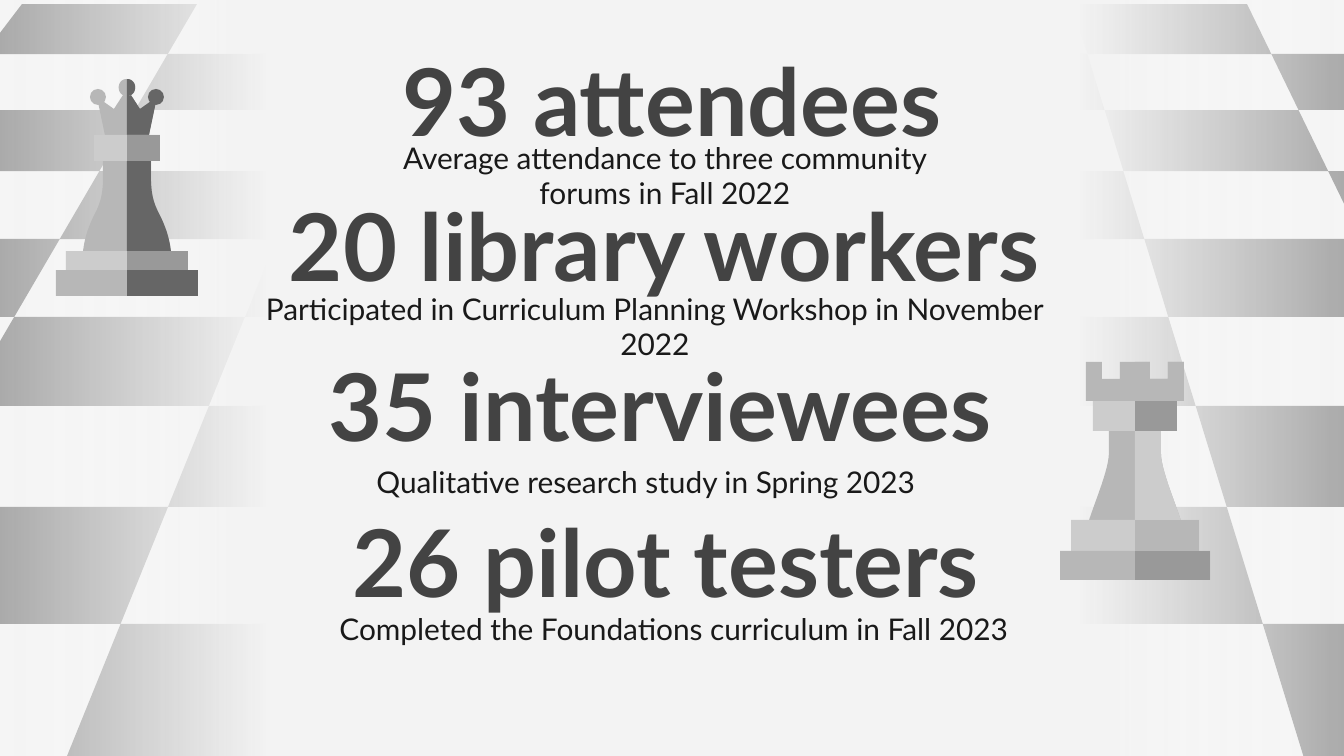
from dataclasses import dataclass

import pptx
import pptx.dml.color
import pptx.enum.shapes
import pptx.enum.text
import pptx.oxml.ns
import pptx.util
from lxml import etree

RGB = pptx.dml.color.RGBColor
ANCHOR = pptx.enum.text.MSO_ANCHOR
PRESET = pptx.enum.shapes.MSO_SHAPE

SCALE = 914400 / 134.4  # EMU in one px
WIDTH, HEIGHT = 1344, 756
INSET = 13

PAPER = RGB(0xF3, 0xF3, 0xF3)
WHITE = RGB(0xFF, 0xFF, 0xFF)
HEADING = RGB(0x43, 0x43, 0x43)
CAPTION = RGB(0x19, 0x19, 0x19)
DARK = RGB(0x66, 0x66, 0x66)
MID = RGB(0x99, 0x99, 0x99)
SOFT = RGB(0xB7, 0xB7, 0xB7)
PALE = RGB(0xCC, 0xCC, 0xCC)

Point = tuple[float, float]

ROW_EDGES = [4, 54, 110, 171, 239, 317, 406, 507, 624, 761]
CLEAR_LEFT, CLEAR_RIGHT = 266, 1078  # the veil is opaque between these


@dataclass
class Part:
    """Half of a symmetric part: points as (distance from the axis, y)."""
    half: list[Point]
    left: RGB
    right: RGB


@dataclass
class TextStyle:
    size: int
    bold: bool
    color: RGB
    anchor: ANCHOR


@dataclass
class Label:
    text: str
    x: int
    y: int
    w: int
    h: int
    style: TextStyle


def px(n: float) -> int:
    return round(n * SCALE)


def bezier(a: Point, b: Point, c: Point, d: Point, steps: int = 16) -> list[Point]:
    def at(t: float, i: int) -> float:
        u = 1 - t
        return u**3 * a[i] + 3 * u * u * t * b[i] + 3 * u * t * t * c[i] + t**3 * d[i]
    return [(at(k / steps, 0), at(k / steps, 1)) for k in range(steps + 1)]


def block(half_width: int, top: int, bottom: int) -> list[Point]:
    return [(0, top), (half_width, top), (half_width, bottom), (0, bottom)]


def paint(sp, color: RGB) -> None:
    sp.shadow.inherit = False
    sp.fill.solid()
    sp.fill.fore_color.rgb = color
    sp.line.fill.background()


def draw_polygon(shapes, points: list[Point], color: RGB) -> None:
    pts = [(px(x), px(y)) for x, y in points]
    builder = shapes.build_freeform(*pts[0], scale=1.0)
    builder.add_line_segments(pts[1:], close=True)
    paint(builder.convert_to_shape(), color)


def draw_disc(shapes, x: int, y: int, size: int, color: RGB) -> None:
    paint(shapes.add_shape(PRESET.OVAL, px(x), px(y), px(size), px(size)), color)


def draw_piece(shapes, axis: int, parts: list[Part]) -> None:
    """Each part is drawn whole, then its right half is shaded."""
    for part in parts:
        right = [(axis + dx, y) for dx, y in part.half]
        left = [(axis - dx, y) for dx, y in reversed(part.half)]
        draw_polygon(shapes, right + left, part.left)
        draw_polygon(shapes, right, part.right)


def board_x(line: int, y: int) -> float:
    """Lines fan out evenly from the top edge to the bottom edge."""
    top, bottom = ROW_EDGES[0], ROW_EDGES[-1]
    t = (y - top) / (bottom - top)
    return (1 - t) * (722 + 175 * line) + t * (685 + 310 * line)


def draw_board(shapes) -> None:
    for row, (top, bottom) in enumerate(zip(ROW_EDGES, ROW_EDGES[1:])):
        for col in range(-6 + row % 2, 5, 2):
            cell = [(board_x(col, top), top), (board_x(col, bottom), bottom),
                    (board_x(col + 1, bottom), bottom), (board_x(col + 1, top), top)]
            left, right = min(x for x, _ in cell), max(x for x, _ in cell)
            on_slide = right > 0 and left < WIDTH
            veiled = left >= CLEAR_LEFT and right <= CLEAR_RIGHT
            if on_slide and not veiled:
                draw_polygon(shapes, cell, MID)


def draw_veil(shapes) -> None:
    """Fade the board into the paper colour towards the middle."""
    sp = shapes.add_shape(PRESET.RECTANGLE, px(-52), px(-32), px(1449), px(839))
    paint(sp, PAPER)
    sp.fill.gradient()
    sp.fill.gradient_angle = 180
    qn = pptx.oxml.ns.qn
    stops = next(sp.element.iter(qn("a:gsLst")))
    for old in list(stops):
        stops.remove(old)
    for pos, color, alpha in [(0, WHITE, 0), (22, PAPER, 100),
                              (78, PAPER, 100), (100, WHITE, 0)]:
        gs = etree.SubElement(stops, qn("a:gs"), pos=str(pos * 1000))
        clr = etree.SubElement(gs, qn("a:srgbClr"), val=str(color))
        etree.SubElement(clr, qn("a:alpha"), val=str(alpha * 1000))


def write_label(sp, label: Label) -> None:
    sp.left, sp.top, sp.width, sp.height = map(px, (label.x, label.y, label.w, label.h))
    tf = sp.text_frame
    tf.word_wrap = True
    tf.auto_size = pptx.enum.text.MSO_AUTO_SIZE.NONE
    tf.vertical_anchor = label.style.anchor
    tf.margin_left = tf.margin_right = tf.margin_top = tf.margin_bottom = px(INSET)
    p = tf.paragraphs[0]
    p.alignment = pptx.enum.text.PP_ALIGN.CENTER
    p.space_before = pptx.util.Pt(0)
    p.line_spacing = 1.0
    r = p.add_run()
    r.text = label.text
    r.font.name = "Lato"
    r.font.size = pptx.util.Pt(label.style.size)
    r.font.bold = label.style.bold
    r.font.color.rgb = label.style.color


BIG = TextStyle(50, True, HEADING, ANCHOR.BOTTOM)
SMALL = TextStyle(16, False, CAPTION, ANCHOR.MIDDLE)

LABELS = [
    Label("93 attendees", 363, 74, 618, 94, BIG),
    Label("Average attendance to three community forums in Fall 2022", 356, 148, 618, 54, SMALL),
    Label("20 library workers", 215, 219, 899, 94, BIG),
    Label("Participated in Curriculum Planning Workshop in November 2022",
          250, 299, 810, 54, SMALL),
    Label("35 interviewees ", 302, 379, 739, 94, BIG),
    Label("Qualitative research study in Spring 2023", 337, 455, 618, 54, SMALL),
    Label("26 pilot testers ", 308, 535, 739, 94, BIG),
    Label("Completed the Foundations curriculum in Fall 2023", 312, 602, 724, 54, SMALL),
]

QUEEN = [
    Part([(0, 155), (24, 155)] + bezier((24, 177), (24, 206), (32, 210), (38, 227))
         + bezier((38, 227), (42, 237), (44, 249), (44, 253)) + [(0, 253)], SOFT, DARK),
    Part([(0, 89), (13, 109), (30, 97), (21, 140), (0, 140)], SOFT, DARK),
    Part(block(33, 135, 161), PALE, MID),
    Part(block(61, 251, 270), PALE, MID),
    Part(block(71, 270, 296), SOFT, DARK),
    Part(bezier((0, 79), (11, 79), (11, 96), (0, 96)), SOFT, DARK),
]

ROOK = [
    Part([(0, 430), (26, 430)] + bezier((26, 453), (26, 474), (49, 521), (49, 534))
         + [(0, 534)], SOFT, PALE),
    Part(block(64, 520, 551), PALE, SOFT),
    Part(block(75, 551, 580), SOFT, MID),
    Part(block(42, 398, 431), PALE, MID),
    Part([(0, 362), (15, 362), (15, 379), (33, 379), (33, 362), (49, 362),
          (49, 401), (0, 401)], SOFT, SOFT),
]


def main() -> None:
    prs = pptx.Presentation()
    prs.slide_width, prs.slide_height = px(WIDTH), px(HEIGHT)
    s = prs.slides.add_slide(prs.slide_layouts[0])
    s.background.fill.solid()
    s.background.fill.fore_color.rgb = PAPER

    draw_board(s.shapes.add_group_shape().shapes)
    draw_veil(s.shapes)

    placeholders = list(s.placeholders)
    for i, label in enumerate(LABELS):
        if i < len(placeholders):
            sp = placeholders[i]
            s.shapes.element.append(sp.element)  # bring in front of the veil
        else:
            sp = s.shapes.add_textbox(0, 0, 0, 0)
        write_label(sp, label)

    queen = s.shapes.add_group_shape().shapes
    draw_piece(queen, 127, QUEEN)
    draw_disc(queen, 90, 89, 16, SOFT)
    draw_disc(queen, 148, 89, 16, DARK)
    draw_piece(s.shapes.add_group_shape().shapes, 1135, ROOK)

    prs.save("out.pptx")


if __name__ == "__main__":
    main()
